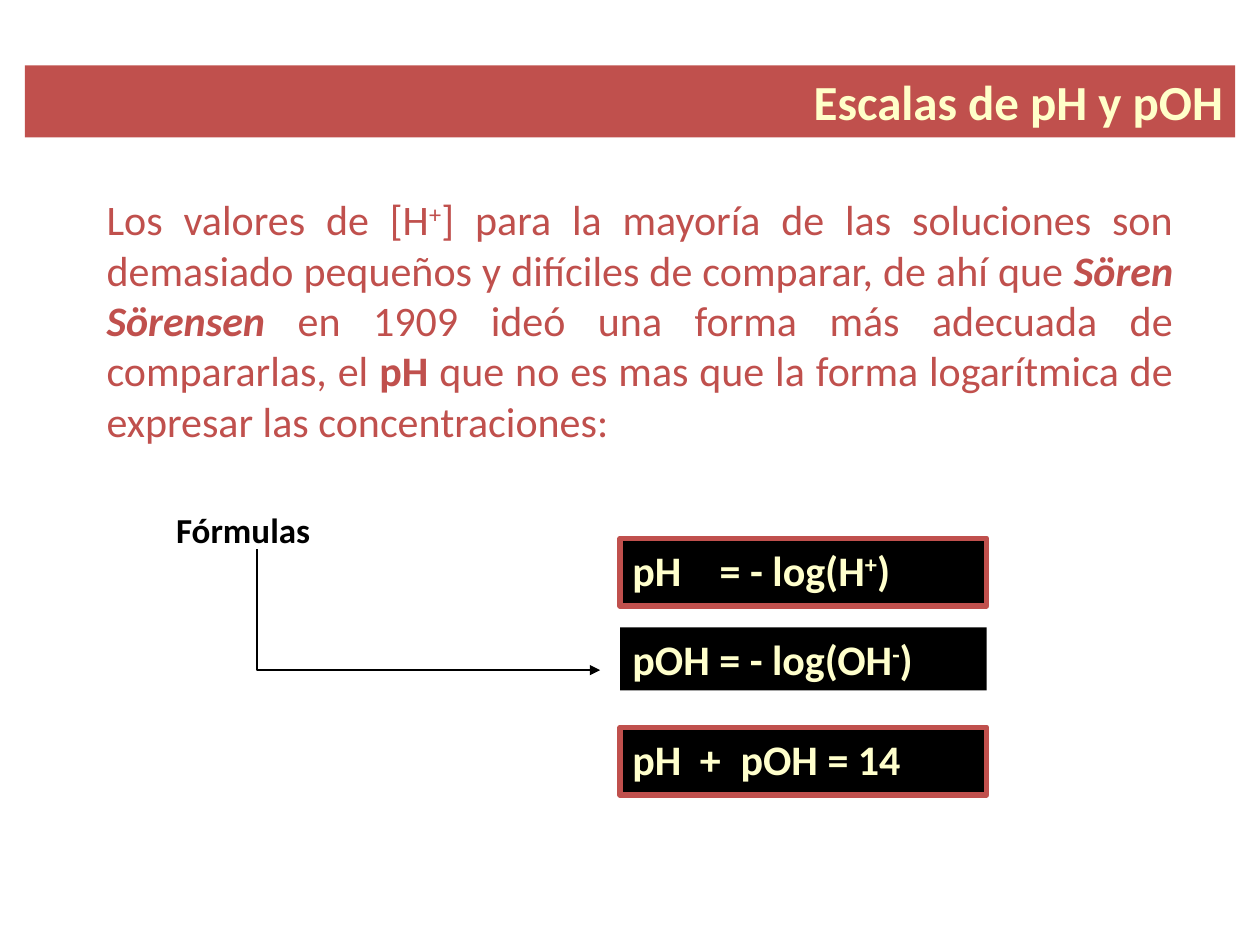
from dataclasses import dataclass

from lxml.etree import SubElement
from pptx import Presentation
from pptx.dml.color import RGBColor
from pptx.enum.shapes import MSO_CONNECTOR, MSO_SHAPE
from pptx.enum.text import MSO_ANCHOR, PP_ALIGN
from pptx.oxml.ns import qn
from pptx.util import Cm, Pt


@dataclass(frozen=True)
class Theme:
    font: str = "Calibri"
    red: RGBColor = RGBColor(0xC0, 0x50, 0x4D)
    black: RGBColor = RGBColor(0, 0, 0)
    cream: RGBColor = RGBColor(0xFF, 0xFF, 0xCC)
    title_cream: RGBColor = RGBColor(0xFF, 0xFF, 0xC9)
    title_size: Pt = Pt(28)
    body_size: Pt = Pt(24)
    label_size: Pt = Pt(20)
    border: Pt = Pt(3)
    arrow: Pt = Pt(0.75)


THEME = Theme()


def write(sp, parts, size, color, bold=None, align=PP_ALIGN.LEFT, tabs=()):
    """Fill a shape with one paragraph of (text, style) parts; style holds b, i or ^."""
    tf = sp.text_frame
    tf.word_wrap = True
    tf.vertical_anchor = MSO_ANCHOR.TOP
    p = tf.paragraphs[0]
    p.alignment = align
    if tabs:
        tab_list = SubElement(p._p.get_or_add_pPr(), qn("a:tabLst"))
        for pos in tabs:
            SubElement(tab_list, qn("a:tab"), pos=str(pos), algn="l")
    p.font.name, p.font.size, p.font.bold = THEME.font, size, bold
    p.font.color.rgb = color
    for text, style in parts:
        r = p.add_run()
        r.text = text
        if "b" in style:
            r.font.bold = True
        if "i" in style:
            r.font.italic = True
        if "^" in style:
            r.font._element.set("baseline", "30000")


def add_box(s, left, top, width, height, fill, border=None):
    sp = s.shapes.add_shape(MSO_SHAPE.RECTANGLE, left, top, width, height)
    sp.shadow.inherit = False
    sp.fill.solid()
    sp.fill.fore_color.rgb = fill
    if border is None:
        sp.line.fill.background()
    else:
        sp.line.color.rgb = border
        sp.line.width = THEME.border
    return sp


def add_title(s, left, top, width, height):
    sp = add_box(s, left, top, width, height, THEME.red)
    write(sp, [("Escalas de pH y pOH", "")], THEME.title_size,
          THEME.title_cream, bold=True, align=PP_ALIGN.RIGHT)


def add_body(s, left, top, width, height):
    sp = s.shapes.add_textbox(left, top, width, height)
    parts = [
        ("Los valores de [H", ""), ("+", "^"),
        ("] para la mayoría de las soluciones son demasiado pequeños y "
         "difíciles de comparar, de ahí que ", ""),
        ("Sören Sörensen", "bi"),
        (" en 1909 ideó una forma más adecuada de compararlas, el ", ""),
        ("pH ", "b"),
        ("que no es mas que la forma logarítmica de expresar las "
         "concentraciones:", ""),
    ]
    write(sp, parts, THEME.body_size, THEME.red, align=PP_ALIGN.JUSTIFY)


def add_formulas(s, left, top, width):
    """Stack the formula boxes; each row has offset, height, border, parts and tabs."""
    rows = [
        (Cm(0), Cm(1.37), THEME.red,
         [("pH\t= - log(H", ""), ("+", "^"), (")", "")], [Cm(1.76)]),
        (Cm(1.8), Cm(1.27), None,
         [("pOH = - log(OH", ""), ("-", "^"), (")", "")], []),
        (Cm(3.81), Cm(1.37), THEME.red,
         [("pH\t+\tpOH = 14", "")], [Cm(1.36), Cm(2.18)]),
    ]
    for offset, height, border, parts, tabs in rows:
        sp = add_box(s, left, top + offset, width, height, THEME.black, border)
        write(sp, parts, THEME.body_size, THEME.cream, bold=True, tabs=tabs)


def add_elbow_arrow(s, left, top, width, height):
    """Draw an arrow that goes down the left side, then right along the bottom."""
    # The elbow is a quarter turn of a mirrored one, so its sides are swapped.
    x = left + (width - height) // 2
    y = top + (height - width) // 2
    line = s.shapes.add_connector(MSO_CONNECTOR.ELBOW, x + height, y, x, y + width)
    line.line.color.rgb = THEME.black
    line.line.width = THEME.arrow
    sp_pr = line._element.spPr
    sp_pr.find(qn("a:xfrm")).set("rot", str(270 * 60000))
    sp_pr.find(qn("a:prstGeom")).set("prst", "bentConnector2")
    SubElement(sp_pr.find(qn("a:ln")), qn("a:tailEnd"), type="triangle")
    SubElement(sp_pr, qn("a:effectLst"))


def add_formula_label(s, left, top, width, height):
    sp = s.shapes.add_textbox(left, top, width, height)
    write(sp, [("Fórmulas", "")], THEME.label_size, THEME.black, bold=True)
    add_elbow_arrow(s, left + Cm(1.88), top + Cm(0.94), Cm(6.92), Cm(2.44))


def main():
    prs = Presentation()
    prs.slide_width, prs.slide_height = Cm(25.4), Cm(19.05)
    s = prs.slides.add_slide(prs.slide_layouts[6])
    add_formulas(s, Cm(12.5), Cm(10.85), Cm(7.39))
    add_body(s, Cm(1.9), Cm(3.78), Cm(22), Cm(5.33))
    add_formula_label(s, Cm(3.3), Cm(10.13), Cm(3.73), Cm(1.09))
    add_title(s, Cm(0.5), Cm(1.32), Cm(24.4), Cm(1.45))
    prs.save("out.pptx")


if __name__ == "__main__":
    main()
